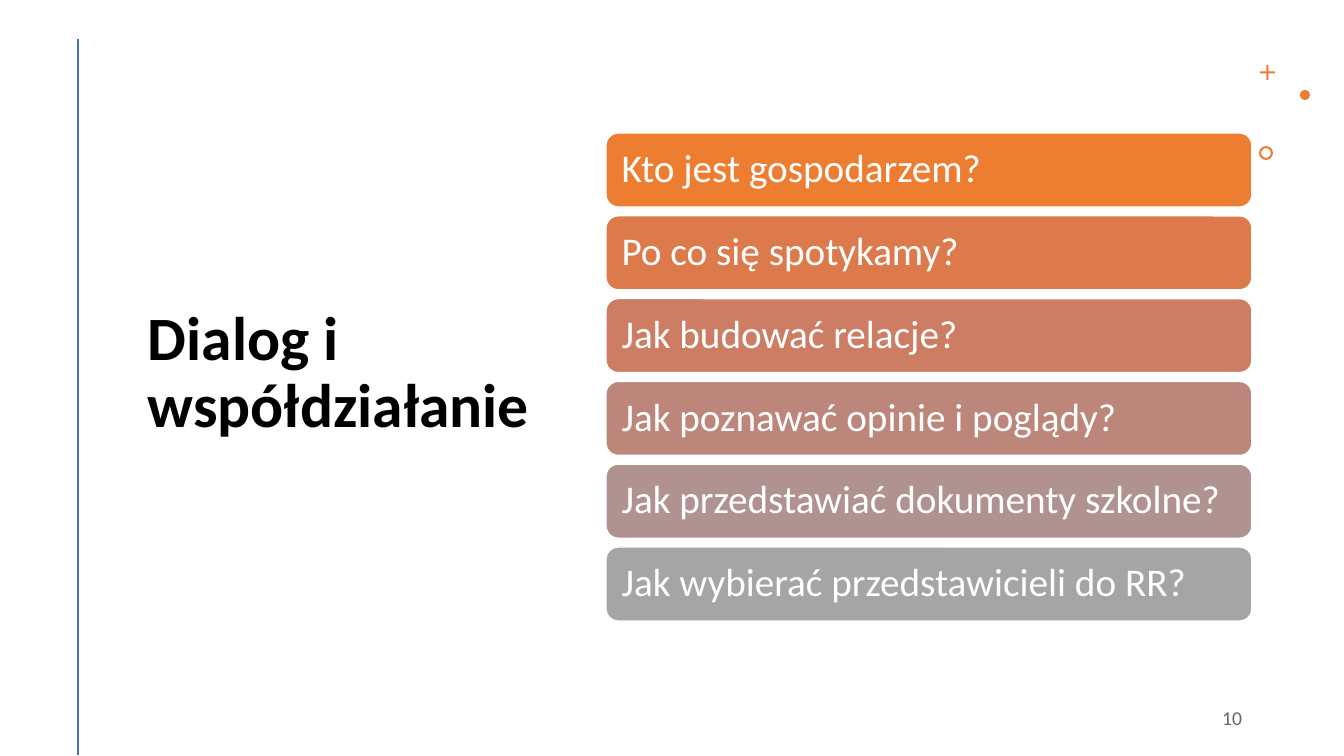
from lxml import etree
from pptx import Presentation
from pptx import util as u
from pptx.dml import color
from pptx.enum import shapes, text
from pptx.oxml import ns

SCALE = 12192000 / 1344
SHAPE = shapes.MSO_SHAPE
ORANGE = "ED7D31"
QUESTIONS = [
    ("Kto jest gospodarzem?", ORANGE),
    ("Po co się spotykamy?", "DC7A4B"),
    ("Jak budować relacje?", "CC7D64"),
    ("Jak poznawać opinie i poglądy?", "BD867B"),
    ("Jak przedstawiać dokumenty szkolne?", "B09391"),
    ("Jak wybierać przedstawicieli do RR?", "A5A5A5"),
]


def px(length):
    """Turn pixels into EMU."""
    return u.Emu(round(length * SCALE))


def rgb(code):
    """Turn a hex string into a colour."""
    return color.RGBColor.from_string(code)


def add_shape(page, kind, box, fill):
    """Add a filled shape without line or shadow."""
    shape = page.shapes.add_shape(kind, *map(px, box))
    shape.shadow.inherit = False
    shape.fill.solid()
    shape.fill.fore_color.rgb = rgb(fill)
    shape.line.fill.background()
    return shape


def write(frame, words, size, ink, bold=False, align=text.PP_ALIGN.LEFT):
    """Write one paragraph into a text frame."""
    frame.word_wrap = True
    para = frame.paragraphs[0]
    para.text = words
    para.alignment = align
    font = para.font
    font.name, font.size, font.bold = "Calibri", u.Pt(size), bold
    font.color.rgb = rgb(ink)
    return para


def add_rule(page, left, top, bottom):
    """Draw the vertical line at the left edge."""
    rule = page.shapes.add_connector(
        shapes.MSO_CONNECTOR.STRAIGHT, px(left), px(top), px(left), px(bottom))
    rule.line.color.rgb = rgb("4472C4")
    rule.line.width = u.Pt(2)
    etree.SubElement(rule._element.spPr, ns.qn("a:effectLst"))


def add_title(page, box):
    """Place the heading, centred vertically in its box."""
    frame = page.shapes.add_textbox(*map(px, box)).text_frame
    frame.vertical_anchor = text.MSO_ANCHOR.MIDDLE
    write(frame, "Dialog i współdziałanie", 44, "000000", bold=True).line_spacing = 0.9


def add_ornaments(page, left, top):
    """Place the plus, dot and ring."""
    plus = add_shape(page, SHAPE.CROSS, (left + 1, top, 15, 15), ORANGE)
    plus.adjustments[0] = 0.43
    add_shape(page, SHAPE.OVAL, (left + 41, top + 25, 10, 10), ORANGE)
    ring = add_shape(page, SHAPE.DONUT, (left, top + 81, 14, 14), ORANGE)
    ring.adjustments[0] = 0.15


def add_questions(page, box):
    """Stack the question cards evenly over the box."""
    left, top, width, height = box
    card_height = 74
    pitch = (height - card_height) / (len(QUESTIONS) - 1)
    for index, (question, fill) in enumerate(QUESTIONS):
        card = add_shape(page, SHAPE.ROUNDED_RECTANGLE,
                         (left, top + index * pitch, width, card_height), fill)
        card.line.color.rgb = rgb("FFFFFF")
        card.line.width = u.Pt(1)
        frame = card.text_frame
        frame.margin_left = frame.margin_right = px(12)
        frame.vertical_anchor = text.MSO_ANCHOR.MIDDLE
        write(frame, question, 28, "FFFFFF").line_spacing = 0.9


def add_page_number(page, box):
    """Place the page number at the lower right."""
    frame = page.shapes.add_textbox(*map(px, box)).text_frame
    write(frame, "10", 14, "666666", align=text.PP_ALIGN.RIGHT)


def main():
    """Build and save the slide."""
    deck = Presentation()
    deck.slide_width, deck.slide_height = px(1344), px(756)
    page = deck.slides.add_slide(deck.slide_layouts[6])
    add_title(page, (138, 66, 434, 616))
    add_rule(page, 78, 39, 755)
    add_ornaments(page, 1259, 65)
    add_page_number(page, (950, 701, 302, 40))
    add_questions(page, (606, 133, 646, 488))
    deck.save("out.pptx")


if __name__ == "__main__":
    main()
